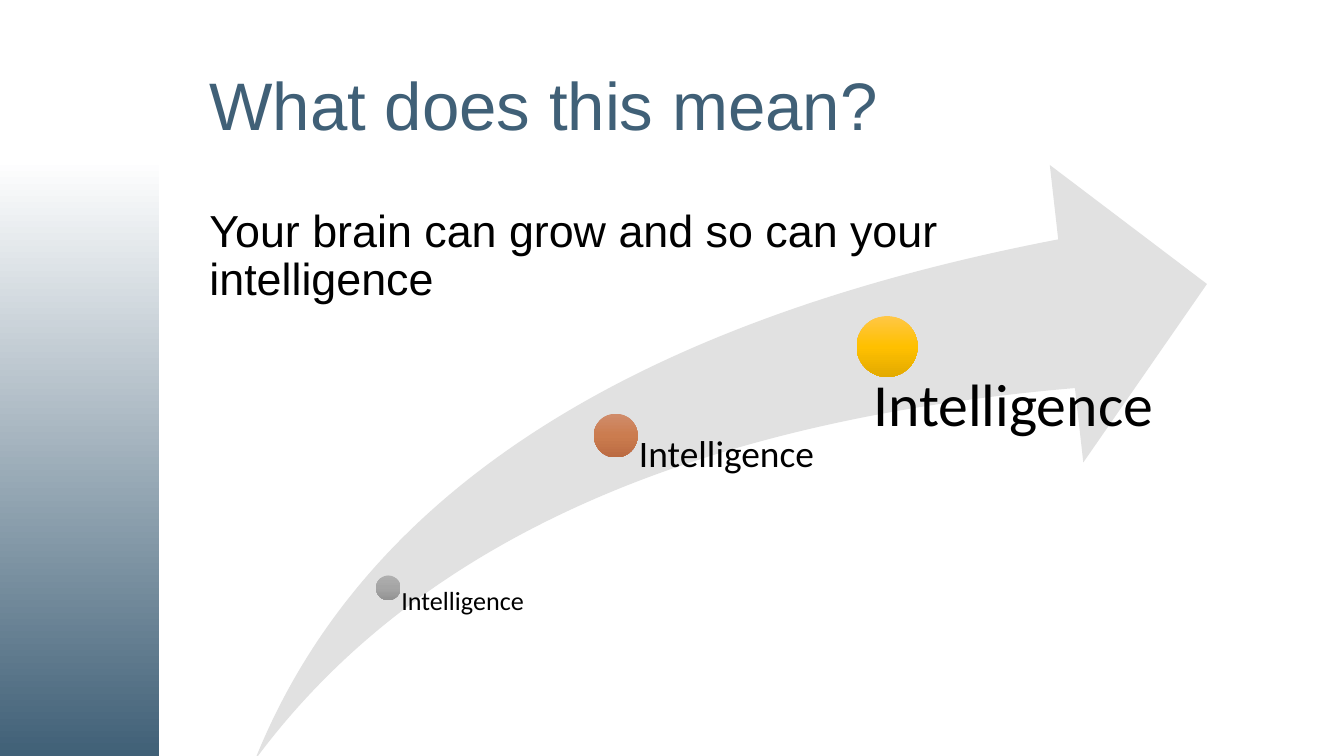
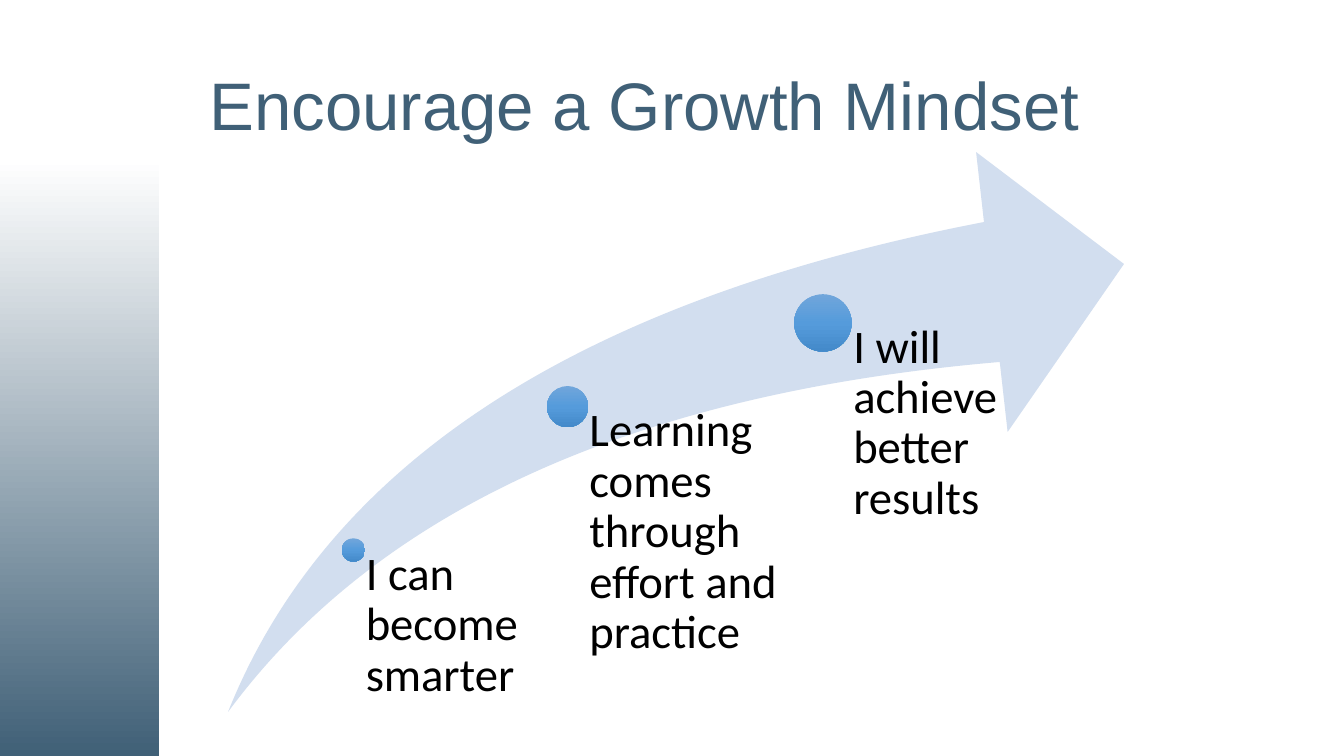
"""Build two growth-mindset slides, each with a rising arrow and three labelled dots."""
from dataclasses import dataclass

from pptx import Presentation
from pptx.dml.color import RGBColor
from pptx.enum.shapes import MSO_SHAPE as Preset
from pptx.enum.text import MSO_ANCHOR as Anchor, MSO_AUTO_SIZE as AutoSize, PP_ALIGN as Align
from pptx.oxml import parse_xml
from pptx.oxml.ns import nsdecls, qn
from pptx.util import Pt


@dataclass(frozen=True)
class Theme:
    brand: str = "406077"
    white: str = "FFFFFF"
    ink: str = "000000"
    pale_gray: str = "E1E1E1"
    pale_blue: str = "D2DEEF"
    silver: tuple = ("AFAFAF", "A5A5A5", "939393")
    bronze: tuple = ("D08C6B", "CB7C4F", "BB6B42")
    gold: tuple = ("FFC746", "FFC000", "E3AA00")
    blue: tuple = ("71A6DB", "559BDB", "448ACA")
    heading_font: str = "Arial"
    label_font: str = "Calibri"
    title_size: int = 36
    body_size: int = 24
    label_size: int = 25


THEME = Theme()
SLIDE_SIZE = (1344, 756)
BAND_BOX = (0, 0, 159, 756)
TITLE_BOX = (196, 40, 972, 138)
BODY_BOX = (196, 202, 972, 496)

# left, top, diameter and label width, as shares of the arrow's size
DOT_RULES = [
    (0.127, 0.69, 0.026, 0.233),
    (0.356, 0.418, 0.046, 0.24),
    (0.632, 0.254, 0.064, 0.24),
]
LABEL_INSET = 0.53

SLIDES = [
    {
        "title": "What does this mean?",
        "body": "Your brain can grow and so can your intelligence",
        "arrow": (255, 165, 952, 595),
        "fill": THEME.pale_gray,
        "steps": [
            {"text": "Intelligence", "size": 14, "dot": THEME.silver},
            {"text": "Intelligence", "size": 20, "dot": THEME.bronze},
            {"text": "Intelligence", "size": 32, "dot": THEME.gold,
             "label": (841, 375, 366, 188)},
        ],
    },
    {
        "title": "Encourage a Growth Mindset",
        "arrow": (228, 152, 896, 560),
        "fill": THEME.pale_blue,
        "steps": [
            {"text": text, "size": THEME.label_size, "dot": THEME.blue}
            for text in ("I can become smarter",
                         "Learning comes through effort and practice",
                         "I will achieve better results")
        ],
    },
]


def px(length):
    return round(length * 914400 / 134.4)


def place(shape, box):
    shape.left, shape.top, shape.width, shape.height = map(px, box)


def write(shape, text, *, font, size, color=THEME.ink, anchor=Anchor.TOP):
    frame = shape.text_frame
    frame.word_wrap = True
    frame.auto_size = AutoSize.NONE
    frame.vertical_anchor = anchor
    paragraph = frame.paragraphs[0]
    paragraph.text = text
    paragraph.alignment = Align.LEFT
    paragraph.line_spacing = 0.9
    paragraph.space_before = Pt(0)
    run_font = paragraph.runs[0].font
    run_font.name, run_font.size = font, Pt(size)
    run_font.color.rgb = RGBColor.from_string(color)
    return frame


def remove_bullet(paragraph):
    properties = paragraph._p.get_or_add_pPr()
    properties.set("marL", "0")
    properties.set("indent", "0")
    properties.append(parse_xml(f"<a:buNone {nsdecls('a')}/>"))


def add_plain(shapes, preset, box):
    shape = shapes.add_shape(preset, *map(px, box))
    shape.shadow.inherit = False
    shape.line.fill.background()
    return shape


def fill_gradient(shape, stops, angle):
    shape.fill.background()
    stop_xml = "".join(
        f'<a:gs pos="{position * 1000}"><a:srgbClr val="{color}"/></a:gs>'
        for position, color in stops)
    gradient = parse_xml(
        f'<a:gradFill {nsdecls("a")} rotWithShape="1"><a:gsLst>{stop_xml}</a:gsLst>'
        f'<a:lin ang="{angle * 60000}" scaled="0"/></a:gradFill>')
    properties = shape.element.spPr
    properties.replace(properties.find(qn("a:noFill")), gradient)


def add_step(shapes, arrow_box, rule, step):
    left, top, width, height = arrow_box
    across, down, share, label_share = rule
    diameter = share * width
    dot_left, dot_top = left + across * width, top + down * height
    dot = add_plain(shapes, Preset.OVAL, (dot_left, dot_top, diameter, diameter))
    fill_gradient(dot, zip((0, 50, 100), step["dot"]), 90)

    center_x, center_y = dot_left + diameter / 2, dot_top + diameter / 2
    label_box = step.get("label") or (
        center_x, center_y, label_share * width, top + height - center_y)
    label = shapes.add_textbox(*map(px, label_box))
    frame = write(label, step["text"], font=THEME.label_font, size=step["size"])
    frame.margin_left = px(LABEL_INSET * diameter)
    frame.margin_top = frame.margin_right = frame.margin_bottom = 0


def add_growth_arrow(slide, content):
    shapes = slide.shapes.add_group_shape().shapes
    arrow = add_plain(shapes, Preset.SWOOSH_ARROW, content["arrow"])
    arrow.adjustments[0] = arrow.adjustments[1] = 0.25
    arrow.fill.solid()
    arrow.fill.fore_color.rgb = RGBColor.from_string(content["fill"])
    for rule, step in zip(DOT_RULES, content["steps"]):
        add_step(shapes, content["arrow"], rule, step)


def add_master_band(presentation, slide):
    band = add_plain(slide.shapes, Preset.RECTANGLE, BAND_BOX)
    fill_gradient(band, [(0, THEME.brand), (79, THEME.white)], 270)
    presentation.slide_master.shapes.element.insert(2, band.element)


def add_slide(presentation, content):
    layout = presentation.slide_layouts[1 if "body" in content else 5]
    slide = presentation.slides.add_slide(layout)
    title = slide.shapes.title
    place(title, TITLE_BOX)
    write(title, content["title"], font=THEME.heading_font, size=THEME.title_size,
          color=THEME.brand, anchor=Anchor.MIDDLE)
    if "body" in content:
        body = slide.placeholders[1]
        place(body, BODY_BOX)
        frame = write(body, content["body"], font=THEME.heading_font, size=THEME.body_size)
        remove_bullet(frame.paragraphs[0])
    add_growth_arrow(slide, content)
    return slide


def main():
    presentation = Presentation()
    presentation.slide_width, presentation.slide_height = map(px, SLIDE_SIZE)
    slides = [add_slide(presentation, content) for content in SLIDES]
    add_master_band(presentation, slides[0])
    presentation.save("out.pptx")


if __name__ == "__main__":
    main()
